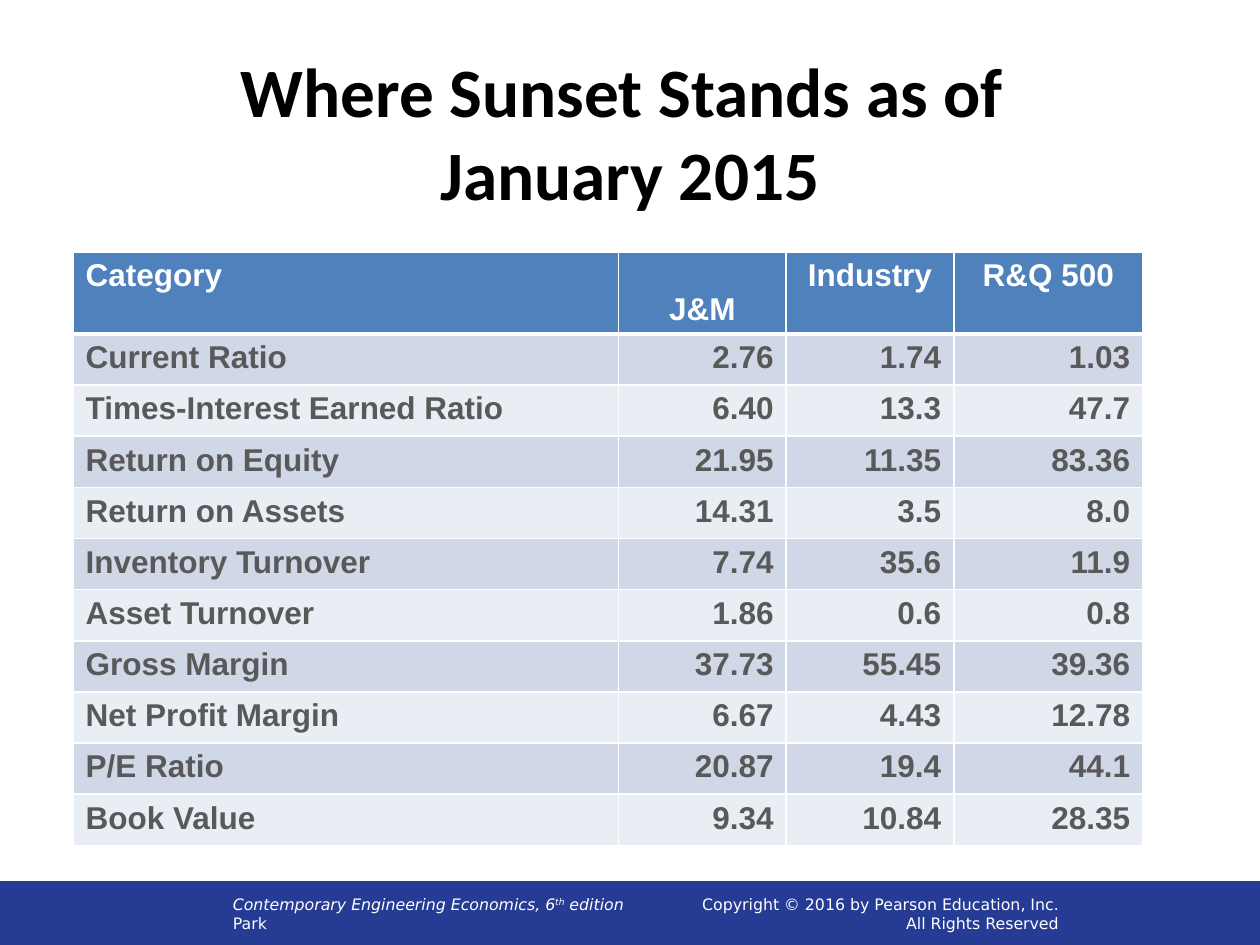
from dataclasses import dataclass

from lxml import etree
from pptx import Presentation
from pptx.dml.color import RGBColor
from pptx.enum.shapes import MSO_SHAPE
from pptx.enum.text import MSO_ANCHOR, MSO_AUTO_SIZE, PP_ALIGN
from pptx.oxml.ns import qn
from pptx.util import Inches, Pt

RECT = MSO_SHAPE.RECTANGLE
TOP, MIDDLE, BOTTOM = MSO_ANCHOR.TOP, MSO_ANCHOR.MIDDLE, MSO_ANCHOR.BOTTOM
LEFT, CENTER, RIGHT = PP_ALIGN.LEFT, PP_ALIGN.CENTER, PP_ALIGN.RIGHT
NO_FIT = MSO_AUTO_SIZE.NONE

WHITE, BLACK, GRAY = "FFFFFF", "000000", "595959"
NAVY, BLUE = "263B94", "4F81BD"
BANDS = ("D0D8E8", "E9EDF4")

TITLE = {"name": "Calibri", "size": Pt(39.6), "bold": True}
CELL = {"name": "Arial", "size": Pt(18), "bold": True}
FOOT = {"name": "DejaVu Sans", "size": Pt(9)}

WIDTHS = (4.33, 1.33, 1.33, 1.5)
HEAD_TALL = Inches(0.65)
ROW_TALL = Inches(4.06) // 10
HEAD = ("Category", "J&M", "Industry", "R&Q 500")
RATIOS = (
    ("Current Ratio", "2.76", "1.74", "1.03"),
    ("Times-Interest Earned Ratio", "6.40", "13.3", "47.7"),
    ("Return on Equity", "21.95", "11.35", "83.36"),
    ("Return on Assets", "14.31", "3.5", "8.0"),
    ("Inventory Turnover", "7.74", "35.6", "11.9"),
    ("Asset Turnover", "1.86", "0.6", "0.8"),
    ("Gross Margin", "37.73", "55.45", "39.36"),
    ("Net Profit Margin", "6.67", "4.43", "12.78"),
    ("P/E Ratio", "20.87", "19.4", "44.1"),
    ("Book Value", "9.34", "10.84", "28.35"),
)


@dataclass
class Span:
    text: str
    italic: bool = False
    raised: bool = False


@dataclass
class Note:
    left: float
    width: float
    align: PP_ALIGN
    lines: tuple


NOTES = (
    Note(1.75, 6.16, LEFT, (
        (Span("Contemporary Engineering Economics, 6", True),
         Span("th", True, True), Span(" edition", True)),
        (Span("Park"),),
    )),
    Note(4.92, 3.58, RIGHT, (
        (Span("Copyright © 2016 by Pearson Education, Inc."),),
        (Span("All Rights Reserved"),),
    )),
)


def rgb(code: str) -> RGBColor:
    return RGBColor.from_string(code)


def style(font, form: dict, color: str) -> None:
    for key, value in form.items():
        setattr(font, key, value)
    font.color.rgb = rgb(color)


def draw_bar(slide) -> None:
    bar = slide.shapes.add_shape(RECT, 0, Inches(7), Inches(10), Inches(0.5))
    bar.shadow.inherit = False
    bar.fill.solid()
    bar.fill.fore_color.rgb = rgb(NAVY)
    bar.line.color.rgb = rgb(NAVY)
    bar.line.width = Pt(0.75)


def draw_note(slide, note: Note) -> None:
    box = slide.shapes.add_textbox(
        Inches(note.left), Inches(7), Inches(note.width), Inches(0.5))
    frame = box.text_frame
    frame.word_wrap = True
    frame.vertical_anchor = MIDDLE
    for i, line in enumerate(note.lines):
        para = frame.add_paragraph() if i else frame.paragraphs[0]
        para.alignment = note.align
        for span in line:
            run = para.add_run()
            run.text = span.text
            style(run.font, FOOT | {"italic": span.italic}, WHITE)
            if span.raised:
                run.font._element.set("baseline", "30000")


def draw_title(slide) -> None:
    title = slide.shapes.title
    title.left, title.top = Inches(0.5), Inches(0.42)
    title.width, title.height = Inches(9), Inches(1.25)
    frame = title.text_frame
    frame.text = "Where Sunset Stands as of \vJanuary 2015"
    frame.auto_size = NO_FIT
    frame.vertical_anchor = MIDDLE
    para = frame.paragraphs[0]
    para.alignment = CENTER
    for run in para.runs:
        style(run.font, TITLE, BLACK)


def edge(cell, sides: dict) -> None:
    """Give a cell white borders; sides maps L, R, T, B to points."""
    props = cell._tc.get_or_add_tcPr()
    for side, width in sides.items():
        line = etree.SubElement(props, qn(f"a:ln{side}"), w=str(Pt(width)))
        fill = etree.SubElement(line, qn("a:solidFill"))
        etree.SubElement(fill, qn("a:srgbClr"), val=WHITE)


def fill_cell(cell, text: str, row: int, col: int) -> None:
    head = row == 0
    edge(cell, {"L": 1, "R": 1, "T": 3 if row == 1 else 1,
                "B": 3 if head else 1})
    cell.fill.solid()
    cell.fill.fore_color.rgb = rgb(BLUE if head else BANDS[(row - 1) % 2])
    cell.vertical_anchor = BOTTOM if text == "J&M" else TOP
    cell.text = text
    para = cell.text_frame.paragraphs[0]
    para.alignment = LEFT if col == 0 else CENTER if head else RIGHT
    style(para.runs[0].font, CELL, WHITE if head else GRAY)


def draw_table(slide) -> None:
    rows = (HEAD, *RATIOS)
    table = slide.shapes.add_table(
        len(rows), len(HEAD), Inches(0.58), Inches(2),
        Inches(sum(WIDTHS)), HEAD_TALL + ROW_TALL * len(RATIOS)).table
    for column, width in zip(table.columns, WIDTHS):
        column.width = Inches(width)
    for r, texts in enumerate(rows):
        table.rows[r].height = ROW_TALL if r else HEAD_TALL
        for c, text in enumerate(texts):
            fill_cell(table.cell(r, c), text, r, c)


def main() -> None:
    deck = Presentation()
    deck.slide_width, deck.slide_height = Inches(10), Inches(7.5)
    slide = deck.slides.add_slide(deck.slide_layouts[5])
    draw_bar(slide)
    for note in NOTES:
        draw_note(slide, note)
    draw_title(slide)
    draw_table(slide)
    deck.save("out.pptx")


if __name__ == "__main__":
    main()
